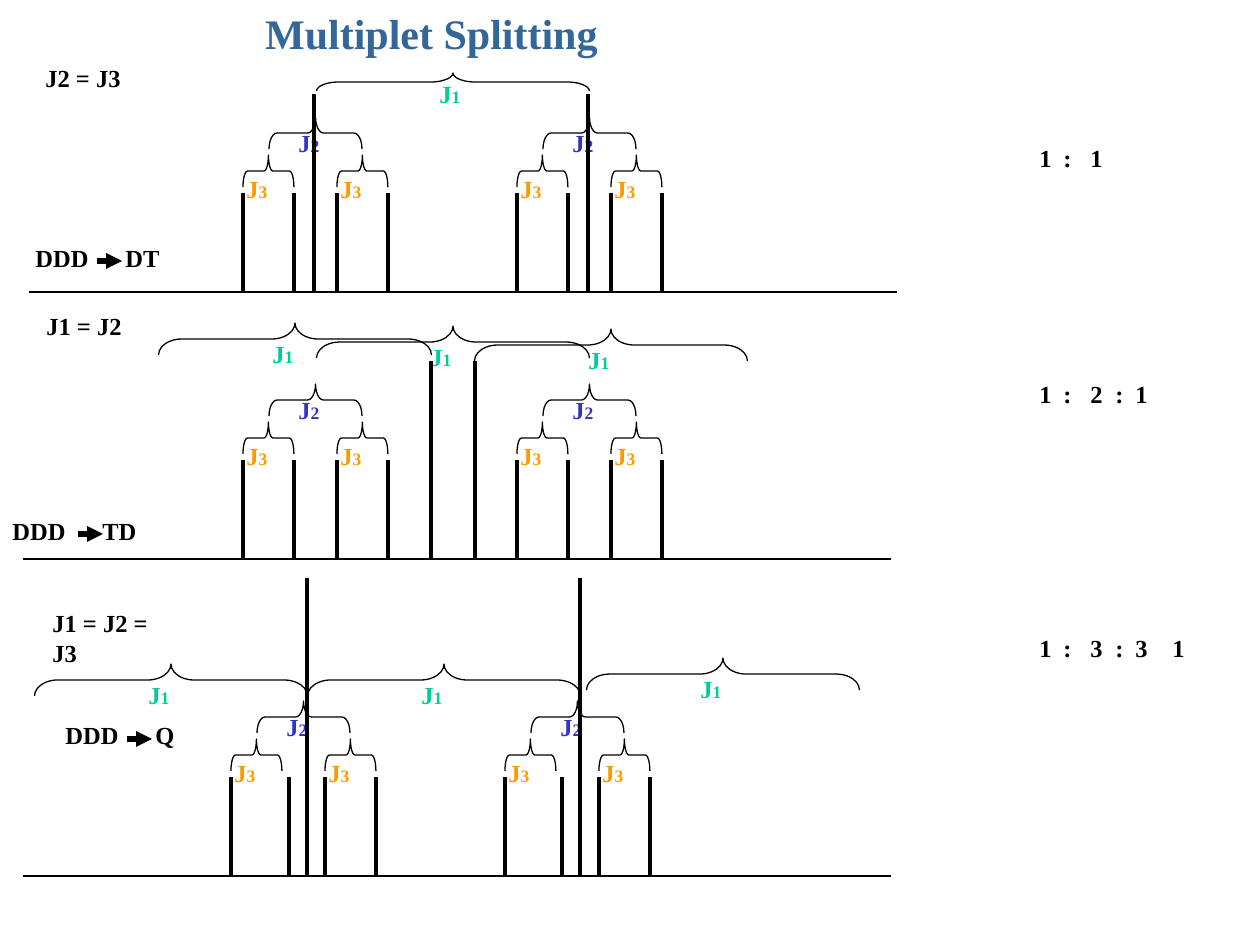
from dataclasses import dataclass

from lxml import etree
from pptx import Presentation, util as u
from pptx.dml.color import RGBColor
from pptx.enum import shapes, text
from pptx.oxml import ns


@dataclass(frozen=True)
class Theme:
    font: str = "Times New Roman"
    ink: str = "000000"
    title: str = "336699"
    j1: str = "00CC99"
    j2: str = "3333CC"
    j3: str = "FF9900"
    title_size: int = 24
    body_size: int = 14
    index_size: int = 10
    thin: float = 0.75
    thick: float = 2.25
    arrow: float = 3


THEME = Theme()
PX = u.Inches(1) / 126

TITLE = "Multiplet Splitting"
SPECTRA = [
    dict(coupling="J2 = J3", coupling_at=(33, 57),
         pattern="DDD\tDT", pattern_at=(23, 237), arrow_at=(97, 261),
         ratio="1\t:\t1", ratio_top=137,
         base=292, axis=(29, 897), inner_axis=(184, 730),
         clusters=[(243, 51), (517, 51)], tall=[314, 588], tall_height=198,
         j1_braces=[(453, 82)], j1_depth=18, j1_curve=1.25, j1_label=(-26, -9)),
    dict(coupling="J1 = J2", coupling_at=(34, 305),
         pattern="DDD\tTD", pattern_at=(0, 510), arrow_at=(78, 534),
         ratio="1\t:\t2\t:\t1", ratio_top=373,
         base=559, axis=(23, 891), inner_axis=(183, 729),
         clusters=[(243, 51), (517, 51)], tall=[431, 475], tall_height=198,
         j1_braces=[(295, 339), (453, 342), (611, 345)],
         j1_depth=32, j1_curve=0.73, j1_label=(-35, -6)),
    dict(coupling="J1 = J2 = J3", coupling_at=(40, 602),
         pattern="DDD\tQ", pattern_at=(53, 714), arrow_at=(127, 739),
         ratio="1\t:\t3\t:\t3\t1", ratio_top=627,
         base=876, axis=(23, 891), inner_axis=(190, 736),
         clusters=[(231, 58), (505, 57)], tall=[307, 580], tall_height=298,
         j1_braces=[(171, 680), (444, 680), (723, 674)],
         j1_depth=32, j1_curve=0.73, j1_label=(-35, -6)),
]
RATIO_LEFT = 1027
PATTERN_TABS = [90]
RATIO_TABS = [24, 51, 76, 96, 133]
J1_SPAN, J2_SPAN, J3_SPAN = 273, 93, 51
CLUSTER_DEPTH = 32
PAIR_GAP = 94
SMALL_HEIGHT = 99


def emu(px):
    return u.Emu(round(px * PX))


def add_text(slide, runs, left, top, width, height=42, *, tabs=(), align=None,
             anchor=text.MSO_ANCHOR.TOP, wrap=False):
    box = slide.shapes.add_textbox(*map(emu, (left, top, width, height)))
    frame = box.text_frame
    frame.word_wrap = wrap or bool(tabs)
    frame.vertical_anchor = anchor
    para = frame.paragraphs[0]
    para.alignment = align
    if tabs:
        frame.margin_right = 0
        stops = etree.SubElement(para._p.get_or_add_pPr(), ns.qn("a:tabLst"))
        for stop in tabs:
            etree.SubElement(stops, ns.qn("a:tab"), pos=str(emu(stop)), algn="l")
    for words, size, color in runs:
        span = para.add_run()
        span.text = words
        span.font.name = THEME.font
        span.font.size = u.Pt(size)
        span.font.bold = True
        span.font.color.rgb = RGBColor.from_string(color)


def add_line(slide, x1, y1, x2, y2, *, width=THEME.thin, arrow=False):
    line = slide.shapes.add_connector(
        shapes.MSO_CONNECTOR.STRAIGHT, *map(emu, (x1, y1, x2, y2)))
    line.line.color.rgb = RGBColor.from_string(THEME.ink)
    line.line.width = u.Pt(width)
    if arrow:
        etree.SubElement(line.line._get_or_add_ln(), ns.qn("a:tailEnd"), type="triangle")
    etree.SubElement(line._element.spPr, ns.qn("a:effectLst"))


def add_brace(slide, x, y, span, depth, curve):
    brace = slide.shapes.add_shape(
        shapes.MSO_SHAPE.RIGHT_BRACE,
        *map(emu, (x - depth / 2, y - span / 2, depth, span)))
    brace.rotation = 270
    brace.adjustments[0] = curve
    brace.adjustments[1] = 0.5
    brace.shadow.inherit = False
    brace.fill.background()
    brace.line.color.rgb = RGBColor.from_string(THEME.ink)
    brace.line.width = u.Pt(THEME.thin)


def add_coupling(slide, index, color, left, top):
    add_text(slide, [("J", THEME.body_size, color), (index, THEME.index_size, color)],
             left, top, 47)


def add_cluster(slide, left, first_gap, base):
    add_brace(slide, left + 72.5, base - 159, J2_SPAN, CLUSTER_DEPTH, 0.25)
    add_coupling(slide, "2", THEME.j2, left + 43, base - 170)
    for x in (left, left + PAIR_GAP):
        add_brace(slide, x + J3_SPAN / 2, base - 121, J3_SPAN, CLUSTER_DEPTH, 0.14)
        add_coupling(slide, "3", THEME.j3, x - 9, base - 124)
    for offset in (0, first_gap, PAIR_GAP, PAIR_GAP + J3_SPAN):
        add_line(slide, left + offset, base, left + offset, base - SMALL_HEIGHT,
                 width=THEME.thick)


def add_spectrum(slide, spectrum):
    base = spectrum["base"]
    for start, end in (spectrum["axis"], spectrum["inner_axis"]):
        add_line(slide, start, base, end, base)
    shift_x, shift_y = spectrum["j1_label"]
    for x, y in spectrum["j1_braces"]:
        add_brace(slide, x, y, J1_SPAN, spectrum["j1_depth"], spectrum["j1_curve"])
        add_coupling(slide, "1", THEME.j1, x + shift_x, y + shift_y)
    for left, first_gap in spectrum["clusters"]:
        add_cluster(slide, left, first_gap, base)
    for x in spectrum["tall"]:
        add_line(slide, x, base, x, base - spectrum["tall_height"], width=THEME.thick)

    def body(key):
        return [(spectrum[key], THEME.body_size, THEME.ink)]

    coupling_width = 151 if spectrum["coupling"].count("=") > 1 else 101
    add_text(slide, body("coupling"), *spectrum["coupling_at"], coupling_width)
    add_text(slide, body("pattern"), *spectrum["pattern_at"], 150, tabs=PATTERN_TABS)
    x, y = spectrum["arrow_at"]
    add_line(slide, x, y, x + 25, y, width=THEME.arrow, arrow=True)
    add_text(slide, body("ratio"), RATIO_LEFT, spectrum["ratio_top"], 170, tabs=RATIO_TABS)


def main():
    deck = Presentation()
    deck.slide_width, deck.slide_height = u.Inches(10), u.Inches(7.5)
    slide = deck.slides.add_slide(deck.slide_layouts[6])
    for spectrum in SPECTRA:
        add_spectrum(slide, spectrum)
    add_text(slide, [(TITLE, THEME.title_size, THEME.title)], 0, 0, 863, 66,
             align=text.PP_ALIGN.CENTER, anchor=text.MSO_ANCHOR.MIDDLE, wrap=True)
    deck.save("out.pptx")


if __name__ == "__main__":
    main()
